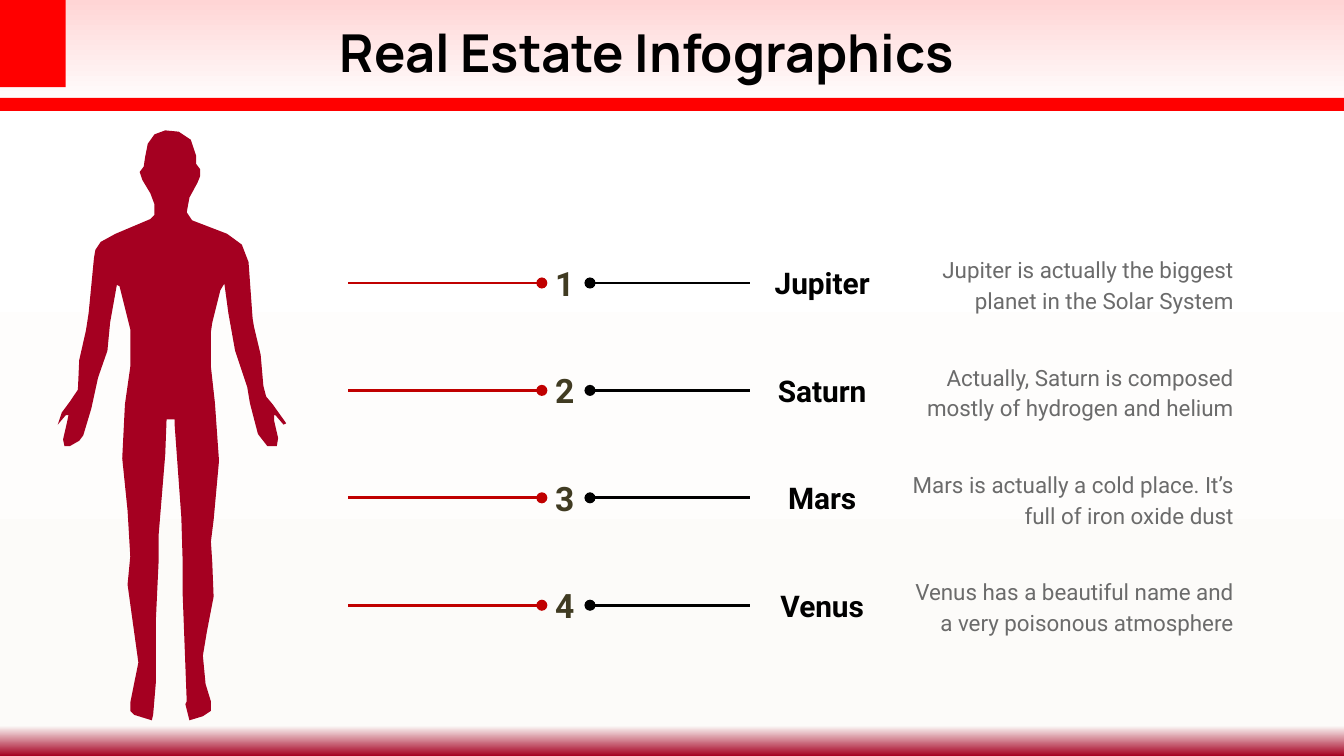
"""Build the Real Estate Infographics slide with four numbered planet rows."""
from copy import deepcopy
from dataclasses import dataclass

from lxml import etree
from pptx import Presentation
from pptx.dml.color import RGBColor
from pptx.enum.shapes import MSO_CONNECTOR, MSO_SHAPE
from pptx.enum.text import MSO_ANCHOR, MSO_AUTO_SIZE, PP_ALIGN
from pptx.oxml.ns import qn
from pptx.util import Cm, Pt

LEFT, CENTER, RIGHT = PP_ALIGN.LEFT, PP_ALIGN.CENTER, PP_ALIGN.RIGHT
TOP, MIDDLE = MSO_ANCHOR.TOP, MSO_ANCHOR.MIDDLE
NO_FIT = MSO_AUTO_SIZE.NONE
RECTANGLE = MSO_SHAPE.RECTANGLE
STRAIGHT = MSO_CONNECTOR.STRAIGHT

WIDTH, HEIGHT = 25.4, 14.29
FIRST_CENTRE, PITCH = 5.35, 2.03


@dataclass(frozen=True)
class TextStyle:
    size: float
    color: str
    font: str = "Roboto"
    bold: bool = False
    align: int = LEFT
    anchor: int = MIDDLE
    spacing: float = 1.0


@dataclass(frozen=True)
class Theme:
    accent: str = "FF0000"
    body: str = "A50021"
    number_line: str = "C00000"
    name_line: str = "000000"
    backdrop: tuple = ((0, "FFD5D5"), (0.14, "FFFFFF"), (0.96, "FCFBF9"), (1, "A50021"))
    title: TextStyle = TextStyle(28, "000000", "Manrope", True, CENTER)
    number: TextStyle = TextStyle(18, "403B22", bold=True)
    name: TextStyle = TextStyle(16, "000000", bold=True, align=CENTER)
    detail: TextStyle = TextStyle(12, "6B6B6B", align=RIGHT, anchor=TOP, spacing=1.15)


@dataclass(frozen=True)
class Planet:
    name: str
    detail: str


THEME = Theme()

PLANETS = (
    Planet("Jupiter", "Jupiter is actually the biggest planet in the Solar System"),
    Planet("Saturn", "Actually, Saturn is composed mostly of hydrogen and helium"),
    Planet("Mars", "Mars is actually a cold place. It’s full of iron oxide dust"),
    Planet("Venus", "Venus has a beautiful name and a very poisonous atmosphere"),
)

BODY_OUTLINE = (
    (141, 536), (138, 524), (139, 522), (136, 443), (136, 419), (135, 385), (130, 316),
    (130, 312), (124, 312), (123, 338), (118, 399), (118, 419), (116, 462), (116, 497),
    (116, 508), (114, 532), (113, 536), (100, 532), (97, 529), (97, 523), (103, 493),
    (98, 457), (95, 435), (97, 414), (95, 380), (91, 341), (93, 301), (97, 273),
    (97, 245), (89, 213), (87, 212), (82, 240), (80, 261), (73, 281), (68, 304),
    (62, 324), (59, 328), (52, 332), (48, 332), (47, 327), (50, 314), (51, 309),
    (49, 309), (43, 316), (46, 307), (52, 299), (58, 290), (59, 268), (64, 246),
    (66, 233), (70, 192), (71, 186), (75, 180), (86, 174), (112, 163), (115, 160),
    (115, 152), (112, 144), (106, 134), (104, 128), (107, 124), (108, 117), (110, 107),
    (115, 100), (123, 97), (133, 98), (142, 104), (146, 116), (146, 122), (149, 126),
    (149, 131), (147, 136), (141, 147), (139, 158), (143, 164), (169, 174), (180, 182),
    (185, 195), (188, 237), (189, 243), (194, 264), (196, 287), (198, 295), (203, 301),
    (213, 315), (211, 316), (205, 309), (204, 309), (204, 313), (207, 326), (206, 332),
    (199, 332), (192, 323), (186, 300), (184, 288), (175, 261), (170, 233), (167, 211),
    (164, 216), (158, 240), (157, 247), (157, 273), (160, 300), (163, 343), (159, 387),
    (157, 403), (158, 419), (159, 444), (154, 470), (151, 488), (153, 509), (157, 522),
    (157, 529), (151, 533),
)


def write_text(box, text: str, style: TextStyle) -> None:
    """Put one styled paragraph into a text-bearing shape."""
    frame = box.text_frame
    frame.text = text
    para = frame.paragraphs[0]
    span = para.runs[0]
    inset = Cm(0.25)
    formats = (
        (frame, {"word_wrap": True, "auto_size": NO_FIT, "vertical_anchor": style.anchor,
                 "margin_left": inset, "margin_right": inset,
                 "margin_top": inset, "margin_bottom": inset}),
        (para, {"alignment": style.align, "line_spacing": style.spacing}),
        (span.font, {"name": style.font, "size": Pt(style.size), "bold": style.bold}),
    )
    for target, values in formats:
        for attribute, value in values.items():
            setattr(target, attribute, value)
    span.font.color.rgb = RGBColor.from_string(style.color)


def add_text(page, left: float, top: float, width: float, height: float,
             text: str, style: TextStyle) -> None:
    """Add a text box."""
    box = page.shapes.add_textbox(Cm(left), Cm(top), Cm(width), Cm(height))
    write_text(box, text, style)


def paint(shape, color: str) -> None:
    """Give a shape a flat fill with no outline or shadow."""
    shape.fill.solid()
    shape.fill.fore_color.rgb = RGBColor.from_string(color)
    shape.line.fill.background()
    shape.shadow.inherit = False


def add_block(page, left: float, top: float, width: float, height: float, color: str):
    """Add a plain rectangle."""
    block = page.shapes.add_shape(RECTANGLE, Cm(left), Cm(top), Cm(width), Cm(height))
    paint(block, color)
    return block


def add_backdrop(page) -> None:
    """Cover the page with the vertical gradient."""
    backdrop = add_block(page, 0, 0, WIDTH, HEIGHT, THEME.accent)
    backdrop.fill.gradient()
    backdrop.fill.gradient_angle = 270
    stop_list = backdrop.element.spPr.find(".//" + qn("a:gsLst"))
    while len(stop_list) < len(THEME.backdrop):
        stop_list.append(deepcopy(stop_list[0]))
    for stop, (position, color) in zip(backdrop.fill.gradient_stops, THEME.backdrop):
        stop.position = position
        stop.color.rgb = RGBColor.from_string(color)


def add_pin(page, start: float, end: float, height: float, color: str) -> None:
    """Add a level line with a round head at its start."""
    pin = page.shapes.add_connector(STRAIGHT, Cm(start), Cm(height), Cm(end), Cm(height))
    pin.line.width = Pt(1.5)
    pin.line.color.rgb = RGBColor.from_string(color)
    properties = pin.element.spPr
    etree.SubElement(properties.find(qn("a:ln")), qn("a:headEnd"), type="oval")
    etree.SubElement(properties, qn("a:effectLst"))


def add_body(page) -> None:
    """Draw the standing human silhouette."""
    start, *rest = BODY_OUTLINE
    builder = page.shapes.build_freeform(*start, scale=Cm(2.54) / 100)
    builder.add_line_segments(rest, close=True)
    paint(builder.convert_to_shape(), THEME.body)


def add_planet(page, index: int, planet: Planet) -> None:
    """Add one numbered row with its two pins, name and detail."""
    centre = FIRST_CENTRE + index * PITCH
    add_text(page, 16.74, centre - 0.83, 6.83, 1.63, planet.detail, THEME.detail)
    add_text(page, 10.24, centre - 0.62, 0.91, 1.24, str(index + 1), THEME.number)
    add_pin(page, 10.24, 6.58, centre, THEME.number_line)
    add_text(page, 14.17, centre - 0.62, 2.74, 1.24, planet.name, THEME.name)
    add_pin(page, 11.15, 14.17, centre, THEME.name_line)


def main() -> None:
    """Assemble and save the deck."""
    deck = Presentation()
    deck.slide_width, deck.slide_height = Cm(WIDTH), Cm(HEIGHT)
    page = deck.slides.add_slide(deck.slide_layouts[5])
    add_backdrop(page)
    add_block(page, 0, 1.85, WIDTH, 0.25, THEME.accent)
    add_block(page, 0, -0.03, 1.24, 1.68, THEME.accent)
    title = page.shapes.title
    title.left, title.top, title.width, title.height = Cm(4.27), Cm(0.3), Cm(15.9), Cm(1.35)
    write_text(title, "Real Estate Infographics", THEME.title)
    title.element.getparent().append(title.element)
    for index, planet in enumerate(PLANETS):
        add_planet(page, index, planet)
    add_body(page)
    deck.save("out.pptx")


if __name__ == "__main__":
    main()
